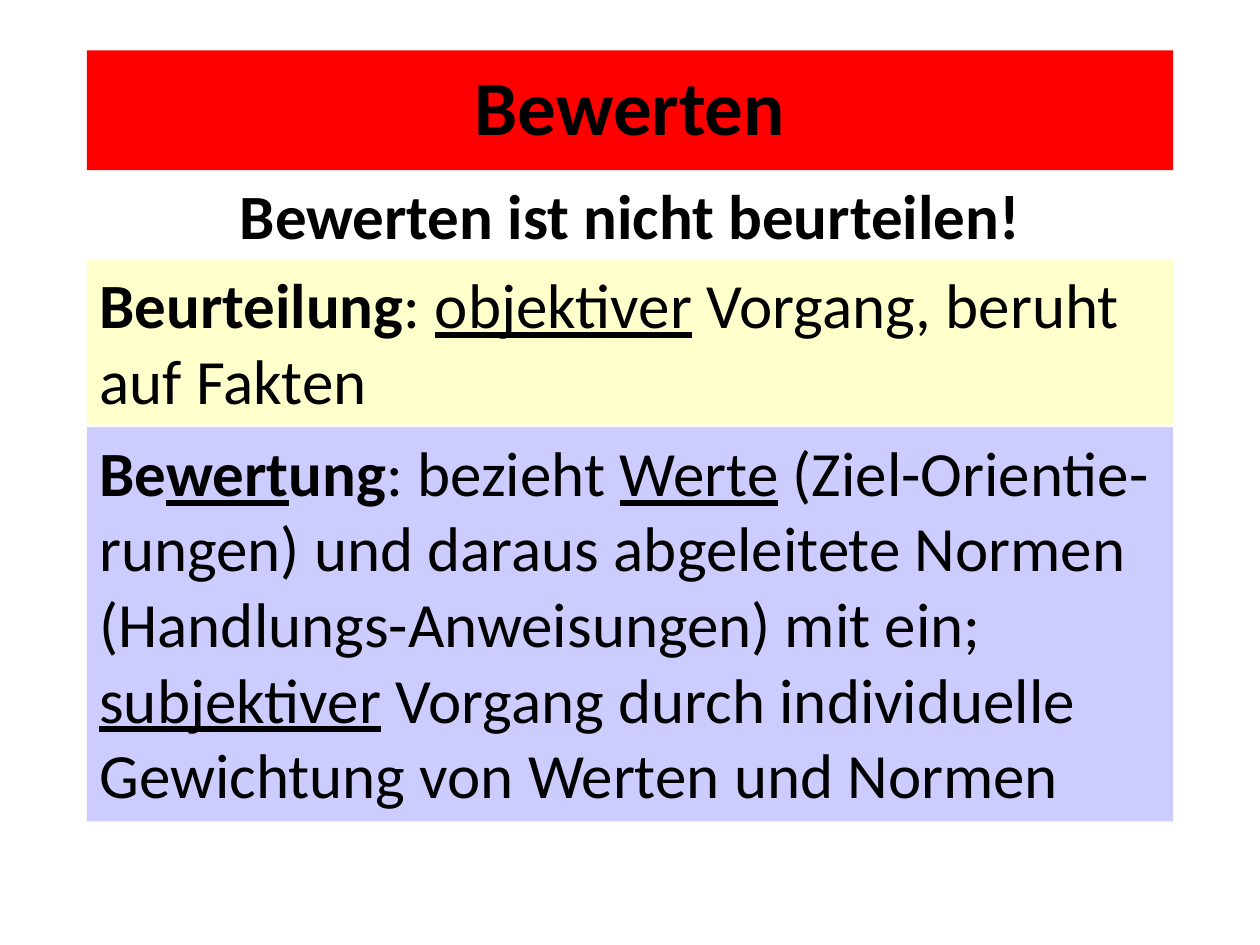
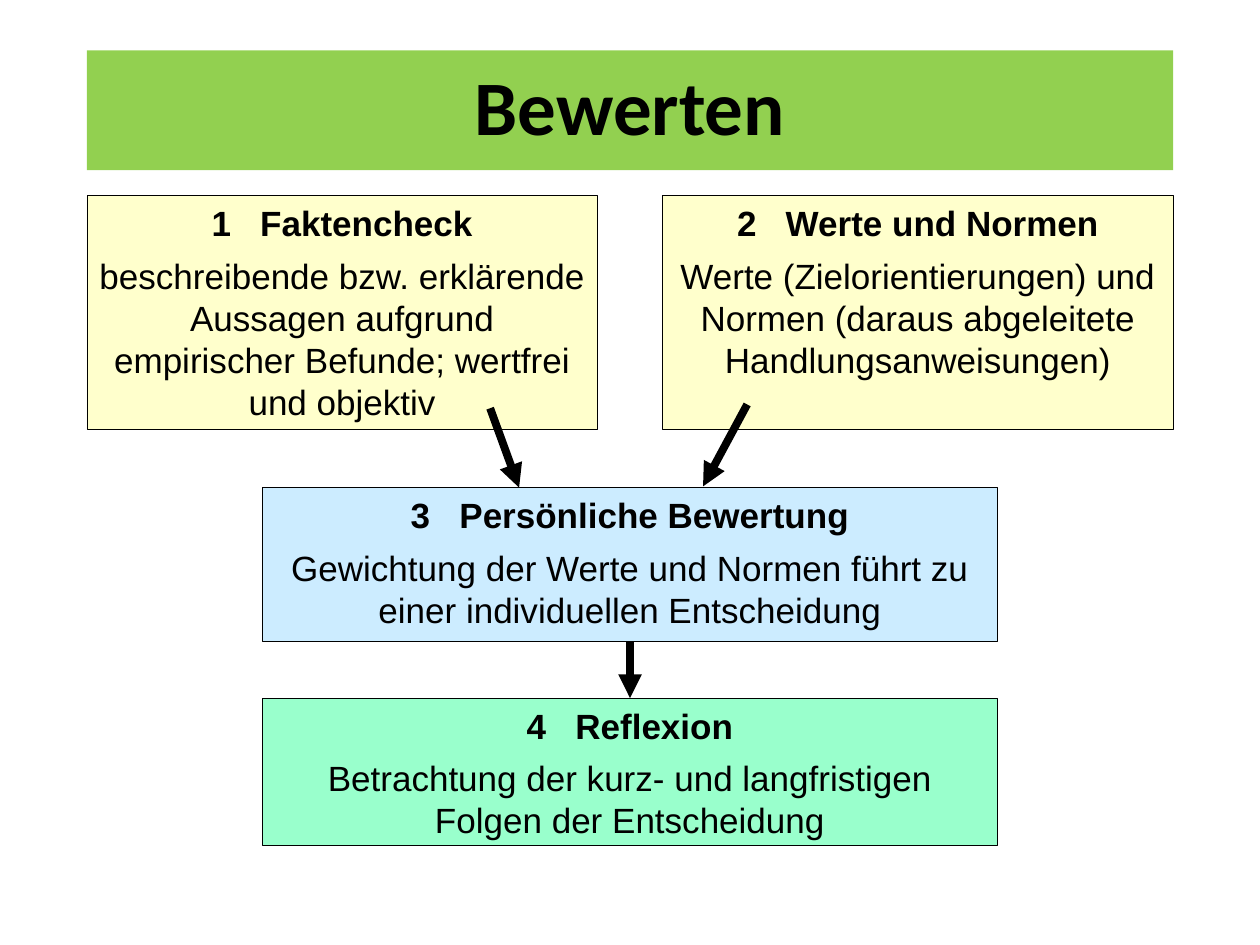
from lxml.etree import SubElement as Sub
from pptx import Presentation
from pptx.dml.color import RGBColor as RGB
from pptx.enum.shapes import MSO_CONNECTOR as Link, MSO_SHAPE as Form
from pptx.enum.text import MSO_ANCHOR as Anchor, MSO_AUTO_SIZE as Fit, PP_ALIGN as Align
from pptx.oxml.ns import qn
from pptx.util import Inches, Pt

# Grid: 100 columns by 75 rows, one cell is a tenth of an inch
COLS, ROWS = 100, 75
EDGE = 6.9
WIDE = COLS - 2 * EDGE
HALF = 40.5
STEP = 58.4
MID = (COLS - STEP) / 2

INK, RED, GREEN = "000000", "FF0000", "92D050"
CREAM, LILAC, SKY, MINT = "FFFFCC", "CCCCFF", "CCECFF", "99FFCC"


def cell(count):
    return Inches(count / 10)


def tint(code):
    return RGB.from_string(code)


def write(para, *runs, font="Calibri", size=36, align=Align.LEFT,
          before=0, after=0, lead=1.0):
    """Fill a paragraph with (text, marks) runs; marks hold b for bold, u for underline."""
    para.alignment, para.line_spacing = align, lead
    para.space_before, para.space_after = Pt(before), Pt(after)
    for text, marks in runs:
        run = para.add_run()
        run.text = text
        run.font.name, run.font.size = font, Pt(size)
        run.font.bold, run.font.underline = "b" in marks, "u" in marks
        run.font.color.rgb = tint(INK)


class Deck:
    def __init__(self):
        self.show = Presentation()
        self.show.slide_width, self.show.slide_height = cell(COLS), cell(ROWS)
        self.page = None

    def begin(self, title, fill):
        """Start a slide with its title band."""
        self.page = self.show.slides.add_slide(self.show.slide_layouts[6])
        frame = self.box(EDGE, 4, WIDE, 9.5, fill)
        frame.vertical_anchor = Anchor.MIDDLE
        write(frame.paragraphs[0], (title, "b"), size=44, align=Align.CENTER, lead=0.9)

    def box(self, left, top, wide, high, fill, rim=False):
        """Draw a filled rectangle and return its text frame."""
        shape = self.page.shapes.add_shape(
            Form.RECTANGLE, *map(cell, (left, top, wide, high)))
        shape.shadow.inherit = False
        shape.fill.solid()
        shape.fill.fore_color.rgb = tint(fill)
        if rim:
            shape.line.color.rgb, shape.line.width = tint(INK), Pt(0.5)
        else:
            shape.line.fill.background()
        frame = shape.text_frame
        frame.word_wrap, frame.vertical_anchor = True, Anchor.TOP
        return frame

    def claim(self, top, high, text):
        """Place a centred bold line without a fill."""
        frame = self.page.shapes.add_textbox(
            *map(cell, (EDGE, top, WIDE, high))).text_frame
        frame.word_wrap = True
        write(frame.paragraphs[0], (text, "b"), align=Align.CENTER)

    def panel(self, top, high, fill, *runs):
        """Place a full-width definition."""
        frame = self.box(EDGE, top, WIDE, high, fill)
        frame.auto_size = Fit.SHAPE_TO_FIT_TEXT
        write(frame.paragraphs[0], *runs)

    def stage(self, left, top, wide, high, fill, number, head, body):
        """Place a numbered stage with a heading and its explanation."""
        frame = self.box(left, top, wide, high, fill, rim=True)
        look = dict(font="Arial", size=20, align=Align.CENTER)
        title = frame.paragraphs[0]
        write(title, (number, "b"), (" ", "b"), (head, "b"), before=6, after=6, **look)
        # Widen the gap between number and heading by letter spacing
        title.runs[1].font._element.set("spc", "1110")
        write(frame.add_paragraph(), (body, ""), **look)

    def arrow(self, *ends):
        """Draw a thick arrow from (x, y) to (x, y)."""
        line = self.page.shapes.add_connector(Link.STRAIGHT, *map(cell, ends))
        line.line.color.rgb, line.line.width = tint(INK), Pt(4.5)
        Sub(line.line._get_or_add_ln(), qn("a:tailEnd"), type="triangle")
        Sub(line._element.spPr, qn("a:effectLst"))


def terms(deck):
    deck.begin("Bewerten", RED)
    deck.claim(13.5, 7.1, "Bewerten ist nicht beurteilen!")
    deck.panel(20.6, 13.1, CREAM, ("Beurteilung", "b"), (": ", ""),
               ("objektiver", "u"), (" Vorgang, beruht auf Fakten", ""))
    deck.panel(33.9, 31.3, LILAC, ("Be", "b"), ("wert", "bu"), ("ung", "b"),
               (": bezieht ", ""), ("Werte", "u"),
               (" (Ziel-Orientie-rungen) und daraus abgeleitete Normen "
                "(Handlungs-Anweisungen) mit ein; ", ""),
               ("subjektiver", "u"),
               (" Vorgang durch individuelle Gewichtung von Werten und Normen", ""))


def stages(deck):
    deck.begin("Bewerten", GREEN)
    # Two inputs side by side
    inputs = [
        ("Faktencheck", "beschreibende bzw. erklärende Aussagen aufgrund "
                        "empirischer Befunde; wertfrei und objektiv"),
        ("Werte und Normen", "Werte (Zielorientierungen) und Normen "
                             "(daraus abgeleitete Handlungsanweisungen)"),
    ]
    for i, (head, body) in enumerate(inputs):
        left = EDGE + i * (WIDE - HALF)
        deck.stage(left, 15.5, HALF, 18.6, CREAM, str(i + 1), head, body)
    # Two steps below them
    deck.stage(MID, 38.7, STEP, 12.2, SKY, "3", "Persönliche Bewertung",
               "Gewichtung der Werte und Normen führt zu einer individuellen Entscheidung")
    deck.stage(MID, 55.4, STEP, 11.7, MINT, "4", "Reflexion",
               "Betrachtung der kurz- und langfristigen Folgen der Entscheidung")
    # Flow between the stages
    for ends in [(38.9, 32.4, 41.2, 38.7), (59.3, 32.1, 55.8, 38.6),
                 (COLS / 2, 50.9, COLS / 2, 55.4)]:
        deck.arrow(*ends)


def main():
    deck = Deck()
    terms(deck)
    stages(deck)
    deck.show.save("out.pptx")


if __name__ == "__main__":
    main()
